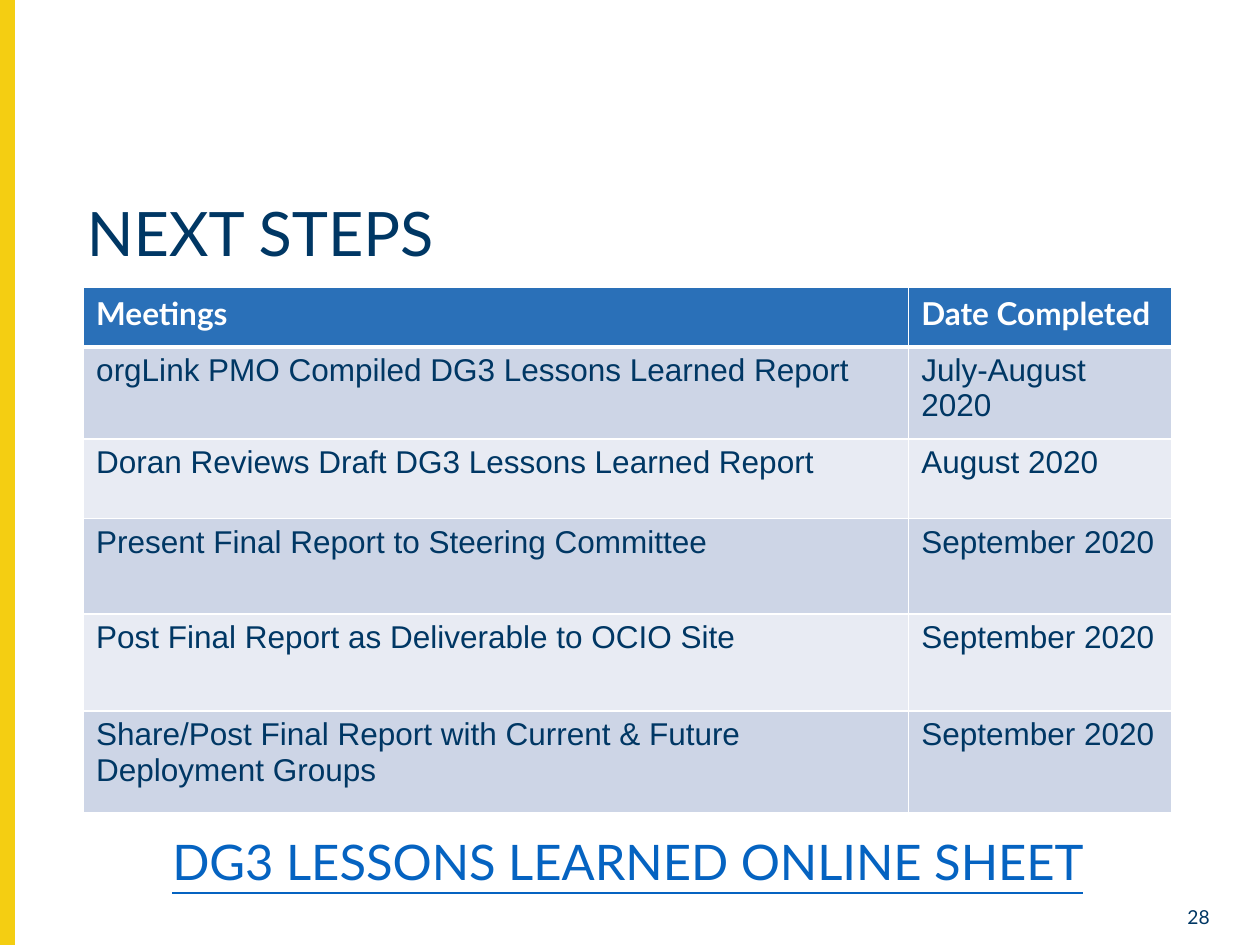
import pptx
import pptx.dml.color
import pptx.enum.shapes
import pptx.enum.text
import pptx.oxml.ns
import pptx.util
from lxml import etree

Pt = pptx.util.Pt
ALIGN = pptx.enum.text.PP_ALIGN
ANCHOR = pptx.enum.text.MSO_ANCHOR

COLORS = {
    "navy": "003764",
    "yellow": "F4CE12",
    "header": "2A70B8",
    "dark_band": "CDD5E6",
    "light_band": "E8EBF3",
    "link": "0563C1",
    "white": "FFFFFF",
}
MEETINGS = [
    ("Meetings", "Date Completed"),
    ("orgLink PMO Compiled DG3 Lessons Learned Report", "July-August 2020"),
    ("Doran Reviews Draft DG3 Lessons Learned Report", "August 2020"),
    ("Present Final Report to Steering Committee", "September 2020"),
    ("Post Final Report as Deliverable to OCIO Site", "September 2020"),
    ("Share/Post Final Report with Current & Future Deployment Groups", "September 2020"),
]
COLUMN_SHARES = (0.758, 0.242)
ROW_HEIGHTS = (33.8, 52.6, 45.4, 54.7, 55.4, 58.3)


def rgb(name):
    return pptx.dml.color.RGBColor.from_string(COLORS[name])


def format_text(text_frame, size, font_name, color, bold=False, underline=False):
    for paragraph in text_frame.paragraphs:
        for run in paragraph.runs:
            run.font.size = Pt(size)
            run.font.name = font_name
            run.font.bold = bold
            run.font.underline = underline
            run.font.color.rgb = rgb(color)


def add_text(slide, box, text, size, color="navy", align=ALIGN.LEFT,
             anchor=ANCHOR.TOP, line_spacing=1.0, underline=False):
    shape = slide.shapes.add_textbox(*map(Pt, box))
    text_frame = shape.text_frame
    text_frame.word_wrap = True
    text_frame.vertical_anchor = anchor
    text_frame.text = text
    paragraph = text_frame.paragraphs[0]
    paragraph.alignment = align
    paragraph.line_spacing = line_spacing
    format_text(text_frame, size, "Lato", color, underline=underline)


def add_side_bar(slide, box):
    shape = slide.shapes.add_shape(pptx.enum.shapes.MSO_SHAPE.RECTANGLE, *map(Pt, box))
    shape.shadow.inherit = False
    shape.fill.solid()
    shape.fill.fore_color.rgb = rgb("yellow")
    shape.line.color.rgb = rgb("yellow")
    shape.line.width = Pt(1)


def set_borders(cell, widths):
    properties = cell._tc.get_or_add_tcPr()
    for index, (side, width) in enumerate(widths.items()):
        line = etree.Element(pptx.oxml.ns.qn(f"a:ln{side}"), w=str(Pt(width)))
        fill = etree.SubElement(line, pptx.oxml.ns.qn("a:solidFill"))
        etree.SubElement(fill, pptx.oxml.ns.qn("a:srgbClr"), val=COLORS["white"])
        properties.insert(index, line)


def add_meetings_table(slide, box):
    frame = slide.shapes.add_table(len(MEETINGS), len(COLUMN_SHARES), *map(Pt, box))
    table = frame.table
    for column, share in zip(table.columns, COLUMN_SHARES):
        column.width = Pt(box[2] * share)
    for row_index, (values, height) in enumerate(zip(MEETINGS, ROW_HEIGHTS)):
        table.rows[row_index].height = Pt(height)
        is_header = row_index == 0
        band = "header" if is_header else "dark_band" if row_index % 2 else "light_band"
        for column_index, value in enumerate(values):
            cell = table.cell(row_index, column_index)
            cell.text_frame.text = value
            format_text(cell.text_frame, 18, "Lato" if is_header else "Arial",
                        "white" if is_header else "navy", bold=is_header)
            cell.fill.solid()
            cell.fill.fore_color.rgb = rgb(band)
            set_borders(cell, {"L": 1, "R": 1, "T": 3 if row_index == 1 else 1,
                               "B": 3 if is_header else 1})


def build_next_steps(slide, box):
    left, top, width, height = box
    add_side_bar(slide, (left, top, 8, height))
    add_text(slide, (left + 42.5, top + 114.5, 653.8, 41), "NEXT STEPS", 35,
             anchor=ANCHOR.MIDDLE, line_spacing=0.9)
    add_text(slide, (left + width - 57.6, top + 514, 36, 15), "28", 11, align=ALIGN.RIGHT)
    add_meetings_table(slide, (left + 47.8, top + 164.4, 622, sum(ROW_HEIGHTS)))
    add_text(slide, (left + 47.8, top + 475.2, 622, 46.8),
             "DG3 LESSONS LEARNED ONLINE SHEET", 28, "link",
             ALIGN.CENTER, line_spacing=0.9, underline=True)


def main():
    presentation = pptx.Presentation()
    presentation.slide_width = Pt(720)
    presentation.slide_height = Pt(540)
    slide = presentation.slides.add_slide(presentation.slide_layouts[6])
    build_next_steps(slide, (0, 0, 720, 540))
    presentation.save("out.pptx")


if __name__ == "__main__":
    main()
